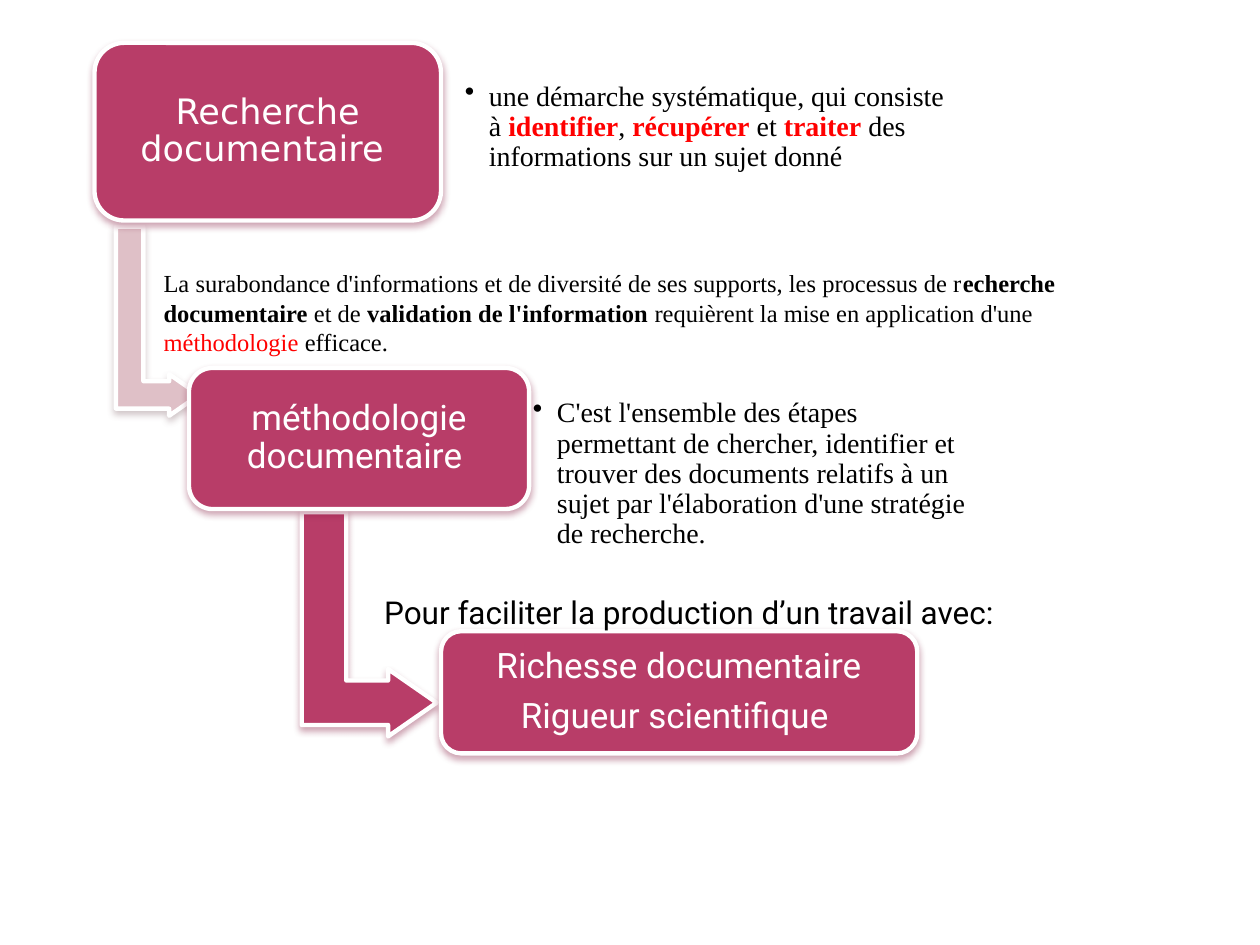
import pptx
import pptx.dml.color
import pptx.enum.shapes
import pptx.enum.text
import pptx.oxml
import pptx.oxml.ns
import pptx.util
from pptx.util import Inches

RASPBERRY = pptx.dml.color.RGBColor(0xB8, 0x3D, 0x68)
PALE_PINK = pptx.dml.color.RGBColor(0xDF, 0xC0, 0xC7)
DARK_RASPBERRY = pptx.dml.color.RGBColor(0x7F, 0x12, 0x38)
DARK_PINK = pptx.dml.color.RGBColor(0x89, 0x6D, 0x73)
WHITE = pptx.dml.color.RGBColor(0xFF, 0xFF, 0xFF)
BLACK = pptx.dml.color.RGBColor(0, 0, 0)
RED = pptx.dml.color.RGBColor(0xFF, 0, 0)
SERIF = "Times New Roman"
MIDDLE = pptx.enum.text.MSO_ANCHOR.MIDDLE


def add_styled_shape(kind, box, fill, shadow):
    shape = slide.shapes.add_shape(kind, *[Inches(length) for length in box])
    shape.fill.solid()
    shape.fill.fore_color.rgb = fill
    shape.line.color.rgb = WHITE
    shape.line.width = pptx.util.Pt(2.5)
    shape.shadow.inherit = False
    effects = shape._element.spPr.find(pptx.oxml.ns.qn("a:effectLst"))
    effects.append(pptx.oxml.parse_xml(
        f'<a:outerShdw {pptx.oxml.ns.nsdecls("a")} blurRad="50800" dist="25400" '
        f'dir="5400000" rotWithShape="0"><a:srgbClr val="{shadow}">'
        '<a:alpha val="38000"/></a:srgbClr></a:outerShdw>'))
    return shape


def add_runs(paragraph, runs, font_name, size):
    for text, color, bold in runs:
        run = paragraph.add_run()
        run.text = text
        run.font.name = font_name
        run.font.size = pptx.util.Pt(size)
        run.font.color.rgb = color
        run.font.bold = bold


presentation = pptx.Presentation()
presentation.slide_width = Inches(10)
presentation.slide_height = Inches(7.5)
slide = presentation.slides.add_slide(presentation.slide_layouts[6])

steps = [
    ((0.75, 0.34, 2.75, 1.41), "DejaVu Sans", ["Recherche documentaire "]),
    ((1.5, 2.92, 2.7, 1.12), "Roboto", ["méthodologie documentaire "]),
    ((3.5, 5.01, 3.78, 0.97), "Roboto", ["Richesse documentaire", "Rigueur scientifique "]),
]
arrows = [
    ((0.5, 2.22, 1.5, 0.66), PALE_PINK, DARK_PINK),
    ((2.04, 4.42, 1.78, 1.07), RASPBERRY, DARK_RASPBERRY),
]
for index, (box, font_name, lines) in enumerate(steps):
    if index < len(arrows):
        arrow = add_styled_shape(pptx.enum.shapes.MSO_SHAPE.BENT_UP_ARROW, *arrows[index])
        arrow.rotation = 90
        for position, value in enumerate((0.33, 0.25, 0.36)):
            arrow.adjustments[position] = value
    step = add_styled_shape(
        pptx.enum.shapes.MSO_SHAPE.ROUNDED_RECTANGLE, box, RASPBERRY, DARK_RASPBERRY)
    frame = step.text_frame
    frame.word_wrap = True
    frame.vertical_anchor = MIDDLE
    frame.margin_left = frame.margin_right = Inches(0.08)
    frame.margin_top = frame.margin_bottom = Inches(0.08)
    for number, line in enumerate(lines):
        paragraph = frame.add_paragraph() if number else frame.paragraphs[0]
        paragraph.alignment = pptx.enum.text.PP_ALIGN.CENTER
        paragraph.line_spacing = 0.9
        paragraph.space_after = pptx.util.Pt(7)
        add_runs(paragraph, [(line, WHITE, False)], font_name, 20)

definitions = [
    ((3.61, 0.49, 4.02, 1.04), 0.08, [
        ("une démarche systématique, qui consiste à ", BLACK, False),
        ("identifier", RED, True),
        (", ", BLACK, False),
        ("récupérer", RED, True),
        (" et ", BLACK, False),
        ("traiter", RED, True),
        (" des informations sur un sujet donné", BLACK, False),
    ]),
    ((4.16, 3.13, 3.59, 1.27), 0.07, [
        ("C'est l'ensemble des étapes permettant de chercher, identifier et trouver "
         "des documents relatifs à un sujet par l'élaboration d'une stratégie de "
         "recherche.", BLACK, False),
    ]),
]
for box, margin, runs in definitions:
    frame = slide.shapes.add_textbox(*[Inches(length) for length in box]).text_frame
    frame.word_wrap = True
    frame.vertical_anchor = MIDDLE
    frame.margin_left = frame.margin_right = Inches(margin)
    frame.margin_top = frame.margin_bottom = Inches(margin)
    paragraph = frame.paragraphs[0]
    paragraph.level = 1
    paragraph.line_spacing = 0.9
    paragraph.space_after = pptx.util.Pt(2.4)
    properties = paragraph._p.get_or_add_pPr()
    properties.set("marL", str(Inches(0.19)))
    properties.set("indent", str(Inches(-0.19)))
    properties.append(pptx.oxml.parse_xml(
        f'<a:buChar {pptx.oxml.ns.nsdecls("a")} char="•"/>'))
    add_runs(paragraph, runs, SERIF, 16)

notes = [
    ((1.2, 2.08, 7.5, 0.81), True, SERIF, 14, [
        ("La surabondance d'informations et de diversité de ses supports, "
         "les processus de r", BLACK, False),
        ("echerche documentaire ", BLACK, True),
        ("et de ", BLACK, False),
        ("validation de l'information ", BLACK, True),
        ("requièrent la mise en application d'une ", BLACK, False),
        ("méthodologie", RED, False),
        (" efficace.", BLACK, False),
    ]),
    ((2.95, 4.66, 5.35, 0.4), False, "Roboto", 18, [
        ("Pour faciliter la production d’un travail avec:", BLACK, False),
    ]),
]
for box, wraps, font_name, size, runs in notes:
    frame = slide.shapes.add_textbox(*[Inches(length) for length in box]).text_frame
    frame.word_wrap = wraps
    frame.auto_size = pptx.enum.text.MSO_AUTO_SIZE.SHAPE_TO_FIT_TEXT
    add_runs(frame.paragraphs[0], runs, font_name, size)

presentation.save("out.pptx")
